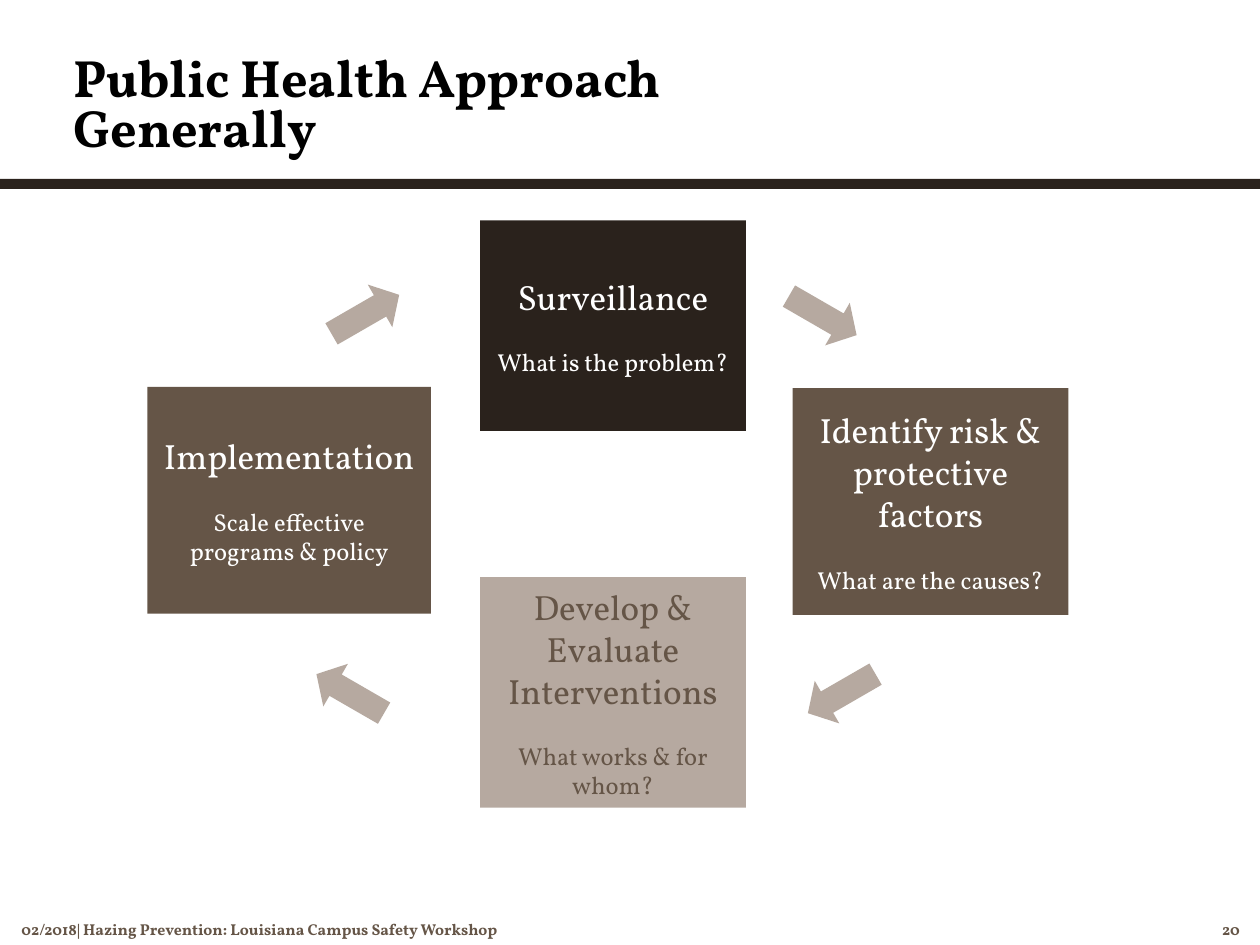
from pptx import Presentation
from pptx import util as u
from pptx.dml.color import RGBColor
from pptx.enum import shapes, text

FONT = "Vollkorn"
DARK, BROWN, TAN, WHITE, BLACK = "2A221C", "655547", "B6A9A0", "FFFFFF", "000000"
WIDTH, HEIGHT = 10, 7.5

TITLE = "Public Health Approach Generally"
FOOTER = "02/2018| Hazing Prevention: Louisiana Campus Safety Workshop"
PAGE = "20"

# heading, question, (left, top, width, height), fill, text colour
STEPS = [
    ("Surveillance", "What is the problem?", (3.81, 1.75, 2.11, 1.67), DARK, WHITE),
    ("Identify risk & protective factors", "What are the causes?",
     (6.29, 3.08, 2.19, 1.8), BROWN, WHITE),
    ("Develop & Evaluate Interventions", "What works & for whom?",
     (3.81, 4.58, 2.11, 1.83), TAN, BROWN),
    ("Implementation", "Scale effective programs & policy",
     (1.17, 3.07, 2.25, 1.8), BROWN, WHITE),
]
# left, top, clockwise angle of each arrow around the cycle
ARROWS = [(6.22, 2.31, 30), (6.37, 5.31, 150), (2.47, 5.31, 210), (2.59, 2.3, 330)]
ARROW_SIZE = (0.62, 0.39)


def rgb(value):
    return RGBColor.from_string(value)


def add_filled(slide, kind, box, fill):
    shape = slide.shapes.add_shape(kind, *map(u.Inches, box))
    shape.shadow.inherit = False
    shape.fill.solid()
    shape.fill.fore_color.rgb = rgb(fill)
    shape.line.fill.background()
    return shape


def write(paragraph, words, size, color, bold=False, align=text.PP_ALIGN.LEFT,
          before=0, spacing=None):
    paragraph.alignment = align
    paragraph.space_before = u.Pt(before)
    if spacing:
        paragraph.line_spacing = spacing
    run = paragraph.add_run()
    run.text = words
    run.font.name = FONT
    run.font.size = u.Pt(size)
    run.font.bold = bold
    run.font.color.rgb = rgb(color)


def add_label(slide, words, box, anchor=text.MSO_ANCHOR.MIDDLE, **style):
    """Add a wrapped text box without margins."""
    frame = slide.shapes.add_textbox(*map(u.Inches, box)).text_frame
    frame.word_wrap = True
    frame.vertical_anchor = anchor
    frame.margin_left = frame.margin_right = frame.margin_top = frame.margin_bottom = 0
    write(frame.paragraphs[0], words, bold=True, **style)


def add_step(slide, heading, question, box, fill, color):
    frame = add_filled(slide, shapes.MSO_SHAPE.RECTANGLE, box, fill).text_frame
    frame.word_wrap = True
    frame.vertical_anchor = text.MSO_ANCHOR.MIDDLE
    center = text.PP_ALIGN.CENTER
    write(frame.paragraphs[0], heading, 20, color, align=center)
    write(frame.add_paragraph(), question, 14, color, align=center, before=17)


def add_arrow(slide, left, top, angle):
    arrow = add_filled(slide, shapes.MSO_SHAPE.RIGHT_ARROW, (left, top, *ARROW_SIZE), TAN)
    arrow.adjustments[0] = 0.5
    arrow.adjustments[1] = 0.45
    arrow.rotation = angle


def main():
    presentation = Presentation()
    presentation.slide_width = u.Inches(WIDTH)
    presentation.slide_height = u.Inches(HEIGHT)
    slide = presentation.slides.add_slide(presentation.slide_layouts[6])

    add_filled(slide, shapes.MSO_SHAPE.RECTANGLE, (0, 1.42, WIDTH, 0.08), DARK)
    add_label(slide, TITLE, (0.58, 0, 6.33, 1.25), anchor=text.MSO_ANCHOR.BOTTOM,
              size=30, color=BLACK, spacing=0.8)
    add_label(slide, FOOTER, (0.17, 7.25, 8.5, 0.25), size=9, color=BROWN)
    add_label(slide, PAGE, (9.42, 7.25, 0.42, 0.25), size=9, color=BROWN,
              align=text.PP_ALIGN.RIGHT)
    for step in STEPS:
        add_step(slide, *step)
    for arrow in ARROWS:
        add_arrow(slide, *arrow)

    presentation.save("out.pptx")


if __name__ == "__main__":
    main()
